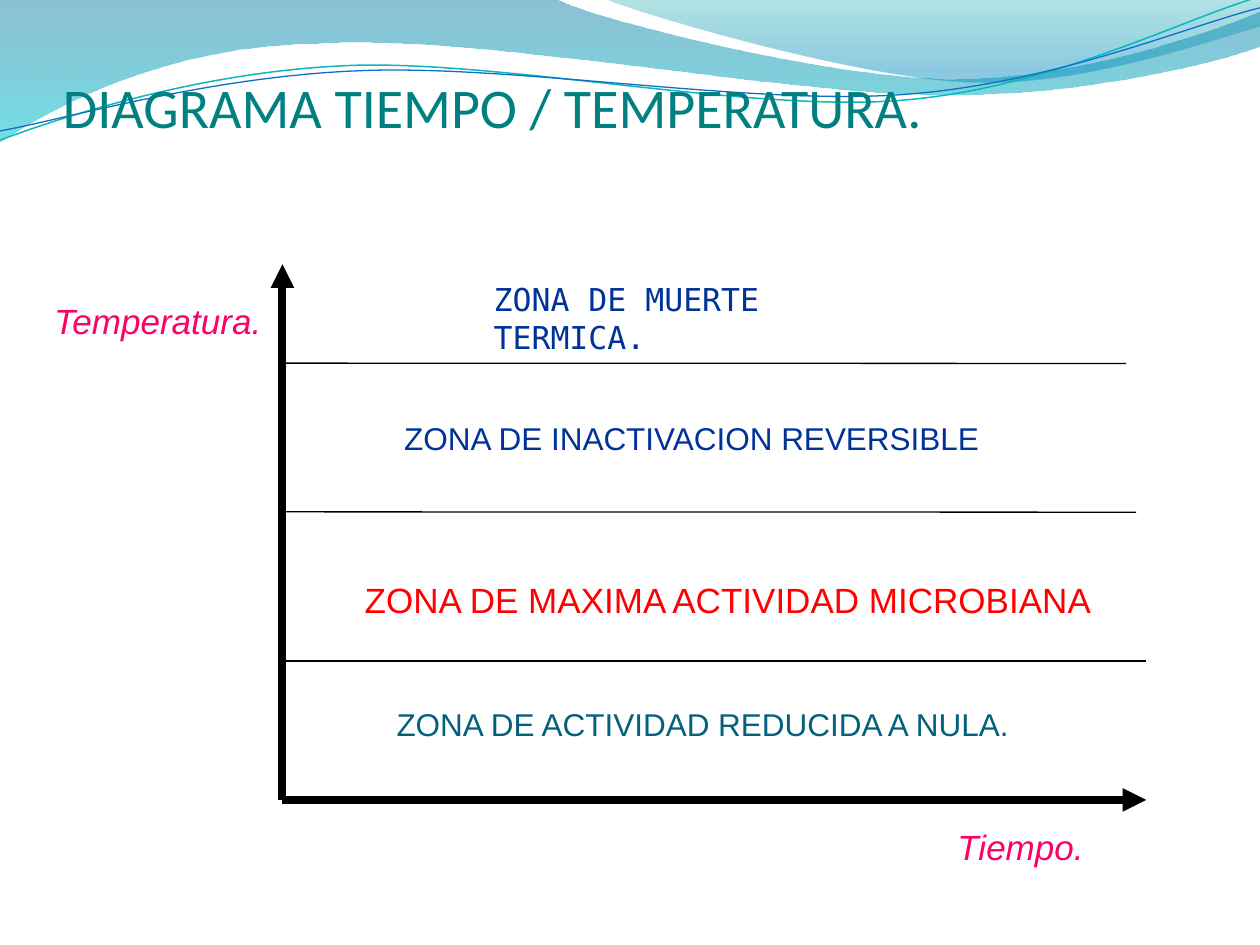
from lxml import etree
from pptx import Presentation
from pptx.dml.color import RGBColor
from pptx.enum.shapes import MSO_CONNECTOR
from pptx.enum.text import MSO_ANCHOR
from pptx.oxml.ns import qn
from pptx.util import Pt

STRAIGHT = MSO_CONNECTOR.STRAIGHT
BOTTOM = MSO_ANCHOR.BOTTOM


def color(hex_string):
    return RGBColor.from_string(hex_string)


def add_wave(shapes, start, segments, closed):
    """Draw a freeform; a segment is one end point or three cubic Bézier points."""
    points = [(Pt(x), Pt(y)) for segment in segments for x, y in segment]
    builder = shapes.build_freeform(Pt(start[0]), Pt(start[1]))
    builder.add_line_segments(points, close=closed)
    shape = builder.convert_to_shape()
    shape.shadow.inherit = False
    steps = iter(list(shape._element.iter(qn("a:lnTo"))))
    for segment in segments:
        first, *others = [next(steps) for _ in segment]
        if others:
            first.tag = qn("a:cubicBezTo")
            for step in others:
                first.append(step[0])
                step.getparent().remove(step)
    return shape


presentation = Presentation()
presentation.slide_width, presentation.slide_height = Pt(720), Pt(540)
slide = presentation.slides.add_slide(presentation.slide_layouts[6])
shapes = slide.shapes

# Filled waves: start, segments, gradient stops (position, color, opacity in %)
filled_waves = [
    ((0, 0), [
        [(317, -1)],
        [(343, 12), (478, 45), (546, 45)],
        [(614, 45), (690, 19), (720, 6.5)],
        [(721, 26)],
        [(708, 32), (626, 55), (537, 54)],
        [(448, 54), (275, 20), (185, 24.5)],
        [(93, 26), (33, 60), (-1, 81.5)],
    ], [(0, "0074A1", 45), (1, "00C6CF", 55)]),
    ((345, -1), [
        [(366, 8), (491, 45), (554, 47)],
        [(616, 50), (692, 23), (720, 15)],
        [(720, 0)],
    ], [(0, "00A1A9", 30), (0.8, "008BBF", 45)]),
]
for start, segments, stops in filled_waves:
    wave = add_wave(shapes, start, segments, True)
    wave.line.fill.background()
    wave.fill.gradient()
    wave.fill.gradient_angle = 270
    for stop, (position, stop_color, _) in zip(wave.fill.gradient_stops, stops):
        stop.position = position
        stop.color.rgb = color(stop_color)
    for element, (_, _, opacity) in zip(wave._element.iter(qn("a:srgbClr")), stops):
        etree.SubElement(element, qn("a:alpha"), val=str(opacity * 1000))

# Thin wave lines: start, segments, color, width
wave_lines = [
    ((-1.4, 63.1), [
        [(34.2, 51.7), (114.3, 29.4), (199.4, 29.9)],
        [(284.4, 30.5), (425.9, 67.2), (512.1, 64.7)],
        [(599.3, 62.3), (676.1, 25.9), (720.6, 15.4)],
    ], "0AB8BF", 0.85),
    ((-2.1, 58), [
        [(33.1, 53.7), (118.2, 32.6), (204.3, 33.2)],
        [(290.4, 33.2), (429.1, 63.8), (515.3, 61.4)],
        [(601.5, 59.4), (679, 30), (721.4, 21.5)],
    ], "0F6FC6", 0.75),
]
for start, segments, line_color, width in wave_lines:
    wave = add_wave(shapes, start, segments, False)
    wave.rotation = 357.3
    wave.fill.background()
    wave.line.color.rgb = color(line_color)
    wave.line.width = Pt(width)

title = shapes.add_textbox(Pt(36), Pt(21.6), Pt(648), Pt(58.3))
frame = title.text_frame
frame.word_wrap = True
frame.vertical_anchor = BOTTOM
frame.margin_left = frame.margin_right = frame.margin_bottom = 0
paragraph = frame.paragraphs[0]
paragraph.text = "DIAGRAMA TIEMPO / TEMPERATURA."
paragraph.font.name = "Calibri"
paragraph.font.size = Pt(32)
paragraph.font.color.rgb = color("008080")

# Labels: text, left, top, width, height, size, font, color, italic
labels = [
    ("ZONA DE MUERTE TERMICA.", 275, 156.5, 259, 29, 18, "DejaVu Sans Mono", "003399", False),
    ("ZONA DE INACTIVACION REVERSIBLE", 223.9, 235.8, 346, 29, 18, "Arial", "003399", False),
    ("ZONA DE MAXIMA ACTIVIDAD MICROBIANA", 201.3, 327, 444, 32, 20, "Arial", "FF0000", False),
    ("ZONA DE ACTIVIDAD REDUCIDA A NULA.", 219.5, 399.5, 370, 29, 18, "Arial", "04617B", False),
    ("Tiempo.", 540, 468, 87, 31, 20, "Arial", "FF0066", True),
    ("Temperatura.", 23.9, 167.7, 135, 31, 20, "Arial", "FF0066", True),
]
for text, left, top, width, height, size, font_name, text_color, italic in labels:
    label = shapes.add_textbox(Pt(left), Pt(top), Pt(width), Pt(height))
    label.text_frame.word_wrap = True
    paragraph = label.text_frame.paragraphs[0]
    paragraph.text = text
    paragraph.font.name = font_name
    paragraph.font.size = Pt(size)
    paragraph.font.italic = italic
    paragraph.font.color.rgb = color(text_color)

# Axes and zone limits: end x, start y, end y, width, arrowhead
origin_x, origin_y = 161.4, 457.1
lines = [
    (origin_x, origin_y, 151, 4.5, True),
    (655, origin_y, origin_y, 4.5, True),
    (655, 377.8, 377.8, 0.75, False),
    (649.2, 292.5, 292.7, 0.75, False),
    (643.5, 207.5, 207.7, 0.75, False),
]
for end_x, start_y, end_y, width, arrowhead in lines:
    connector = shapes.add_connector(STRAIGHT, Pt(origin_x), Pt(start_y), Pt(end_x), Pt(end_y))
    connector.line.color.rgb = color("000000")
    connector.line.width = Pt(width)
    if arrowhead:
        etree.SubElement(connector.line._get_or_add_ln(), qn("a:tailEnd"), type="triangle")
    etree.SubElement(connector._element.spPr, qn("a:effectLst"))

presentation.save("out.pptx")
